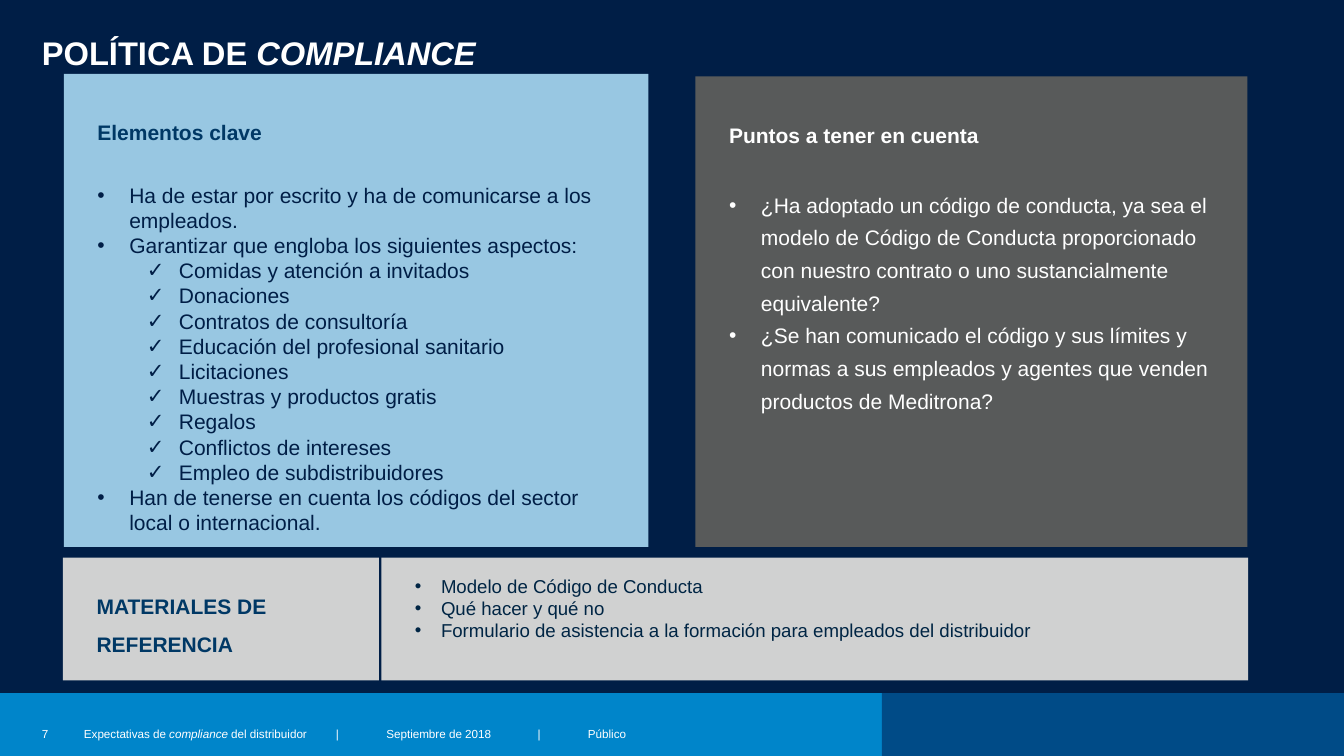
from lxml.etree import SubElement
from pptx import Presentation
from pptx.dml.color import RGBColor
from pptx.enum.shapes import MSO_SHAPE
from pptx.enum.text import MSO_ANCHOR, PP_ALIGN
from pptx.oxml.ns import qn
from pptx.util import Inches, Pt

COLORS = {
    "navy": "001E46", "ink": "002544", "heading": "003865", "white": "FFFFFF",
    "sky": "98C7E2", "charcoal": "585A5A", "silver": "D0D1D1",
    "bar": "0085CA", "bar_end": "004B87",
}
ASPECTS = [
    "Comidas y atención a invitados", "Donaciones", "Contratos de consultoría",
    "Educación del profesional sanitario", "Licitaciones",
    "Muestras y productos gratis", "Regalos", "Conflictos de intereses",
    "Empleo de subdistribuidores",
]
KEY_ELEMENTS = [
    "Ha de estar por escrito y ha de comunicarse a los empleados.",
    "Garantizar que engloba los siguientes aspectos:",
]
SECTOR_CODES = "Han de tenerse en cuenta los códigos del sector local o internacional."
QUESTIONS = [
    "¿Ha adoptado un código de conducta, ya sea el modelo de Código de Conducta "
    "proporcionado con nuestro contrato o uno sustancialmente equivalente?",
    "¿Se han comunicado el código y sus límites y normas a sus empleados y agentes "
    "que venden productos de Meditrona?",
]
MATERIALS = [
    "Modelo de Código de Conducta",
    "Qué hacer y qué no",
    "Formulario de asistencia a la formación para empleados del distribuidor",
]
FOOTER_TABS = [3, 3.6, 5.4, 6]


def rgb(name):
    return RGBColor.from_string(COLORS[name])


def set_frame(frame, insets=(0, 0, 0, 0), anchor=MSO_ANCHOR.TOP):
    """Insets run left, top, right, bottom, in inches."""
    frame.word_wrap = True
    frame.vertical_anchor = anchor
    (frame.margin_left, frame.margin_top,
     frame.margin_right, frame.margin_bottom) = map(Inches, insets)


def add_panel(page, place, fill, insets=(0, 0, 0, 0), anchor=MSO_ANCHOR.TOP):
    panel = page.shapes.add_shape(MSO_SHAPE.RECTANGLE, *map(Inches, place))
    panel.shadow.inherit = False
    panel.fill.solid()
    panel.fill.fore_color.rgb = rgb(fill)
    panel.line.fill.background()
    set_frame(panel.text_frame, insets, anchor)
    return panel.text_frame


def add_label(page, place, anchor=MSO_ANCHOR.TOP):
    box = page.shapes.add_textbox(*map(Inches, place))
    set_frame(box.text_frame, anchor=anchor)
    return box.text_frame


def add_para(frame, spans, size, color, bold=False, spacing=None,
             bullet=None, indent=0, hang=0, tabs=()):
    """Add a paragraph of (text, italic) spans, or of one plain string."""
    first = frame.paragraphs[0]
    para = frame.add_paragraph() if first.runs else first
    props = para._p.get_or_add_pPr()
    if bullet:
        props.set("marL", str(Inches(indent)))
        props.set("indent", str(-Inches(hang)))
        SubElement(props, qn("a:buFont"), typeface="Arial")
        SubElement(props, qn("a:buChar"), char=bullet)
    if tabs:
        stops = SubElement(props, qn("a:tabLst"))
        for stop in tabs:
            SubElement(stops, qn("a:tab"), pos=str(Inches(stop)), algn="l")
    para.alignment = PP_ALIGN.LEFT
    if spacing:
        para.line_spacing = spacing
    para.font.name = "Arial"
    para.font.size = Pt(size)
    para.font.bold = bold
    para.font.color.rgb = rgb(color)
    for text, italic in [(spans, False)] if isinstance(spans, str) else spans:
        span = para.add_run()
        span.text = text
        if italic:
            span.font.italic = True
    return para


def add_heading(frame, text, color):
    para = add_para(frame, text, 18, color, bold=True, spacing=Pt(32))
    para.space_after = Pt(32)


def add_bullets(frame, items, color, size=18, spacing=None,
                bullet="•", indent=0.38, hang=0.38):
    for item in items:
        add_para(frame, item, size, color, spacing=spacing,
                 bullet=bullet, indent=indent, hang=hang)


def add_footer(page):
    add_panel(page, (0, 8.25, 10.5, 0.75), "bar")
    add_panel(page, (10.5, 8.25, 5.5, 0.75), "bar_end")
    details = add_label(page, (1, 8.61, 9, 0.25), MSO_ANCHOR.MIDDLE)
    add_para(details, [("Expectativas de ", False), ("compliance", True),
                       (" del distribuidor\t|\tSeptiembre de 2018\t|\tPúblico", False)],
             10, "white", spacing=Pt(12), tabs=FOOTER_TABS)
    number = add_label(page, (0.5, 8.61, 0.5, 0.25), MSO_ANCHOR.MIDDLE)
    add_para(number, "7", 10, "white", spacing=Pt(12))


def add_materials(page):
    label = add_panel(page, (0.75, 6.64, 3.76, 1.46), "silver",
                      (0.4, 0, 0.4, 0), MSO_ANCHOR.MIDDLE)
    add_para(label, "MATERIALES DE REFERENCIA", 18, "heading", bold=True, spacing=Pt(32))
    listing = add_panel(page, (4.54, 6.64, 10.32, 1.46), "silver",
                        (0.4, 0.1, 0.4, 0.36), MSO_ANCHOR.MIDDLE)
    add_bullets(listing, MATERIALS, "ink", 16, Pt(19), indent=0.31, hang=0.31)


def main():
    deck = Presentation()
    deck.slide_width, deck.slide_height = Inches(16), Inches(9)
    page = deck.slides.add_slide(deck.slide_layouts[6])
    page.background.fill.solid()
    page.background.fill.fore_color.rgb = rgb("navy")

    add_footer(page)
    title = add_label(page, (0.5, 0.46, 15, 0.42))
    add_para(title, [("POLÍTICA DE ", False), ("COMPLIANCE", True)],
             28, "white", bold=True, spacing=0.85)

    points = add_panel(page, (8.28, 0.91, 6.57, 5.6), "charcoal", (0.4,) * 4)
    add_heading(points, "Puntos a tener en cuenta", "white")
    add_bullets(points, QUESTIONS, "white", spacing=Pt(28))

    elements = add_panel(page, (0.76, 0.88, 6.96, 5.63), "sky", (0.4,) * 4)
    add_heading(elements, "Elementos clave", "heading")
    add_bullets(elements, KEY_ELEMENTS, "navy")
    add_bullets(elements, ASPECTS, "navy", bullet="✓", indent=0.97)
    add_bullets(elements, [SECTOR_CODES], "navy")

    add_materials(page)
    deck.save("out.pptx")


if __name__ == "__main__":
    main()
